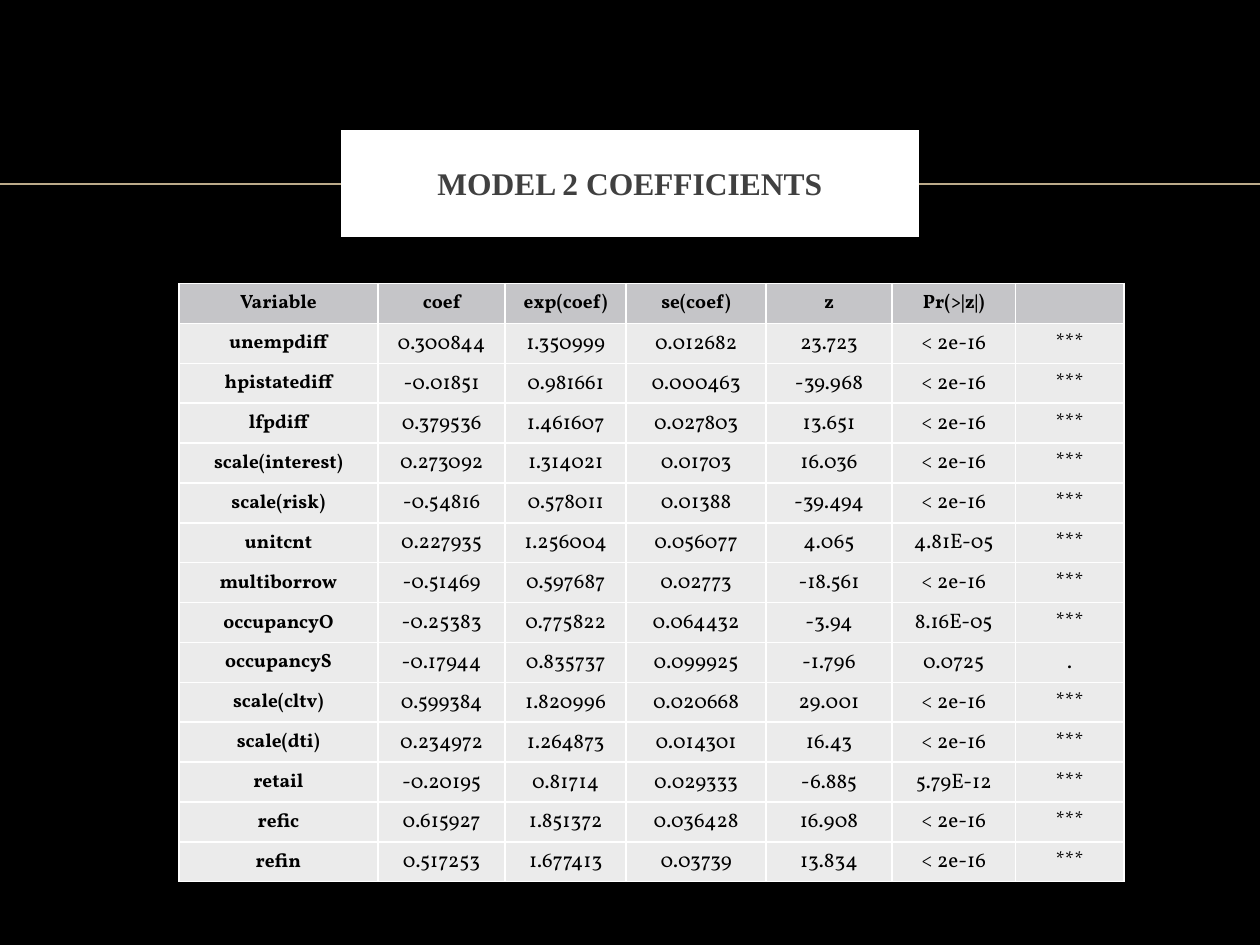
from lxml import etree
from pptx import Presentation
from pptx.dml.color import RGBColor
from pptx.enum import shapes, text
from pptx.oxml.ns import qn
from pptx.util import Inches, Pt

TITLE = "MODEL 2 COEFFICIENTS"
HEADER = ("Variable", "coef", "exp(coef)", "se(coef)", "z", "Pr(>|z|)", "")
COEFFICIENTS = [
    ("unempdiff", "0.300844", "1.350999", "0.012682", "23.723", "< 2e-16", "***"),
    ("hpistatediff", "-0.01851", "0.981661", "0.000463", "-39.968", "< 2e-16", "***"),
    ("lfpdiff", "0.379536", "1.461607", "0.027803", "13.651", "< 2e-16", "***"),
    ("scale(interest)", "0.273092", "1.314021", "0.01703", "16.036", "< 2e-16", "***"),
    ("scale(risk)", "-0.54816", "0.578011", "0.01388", "-39.494", "< 2e-16", "***"),
    ("unitcnt", "0.227935", "1.256004", "0.056077", "4.065", "4.81E-05", "***"),
    ("multiborrow", "-0.51469", "0.597687", "0.02773", "-18.561", "< 2e-16", "***"),
    ("occupancyO", "-0.25383", "0.775822", "0.064432", "-3.94", "8.16E-05", "***"),
    ("occupancyS", "-0.17944", "0.835737", "0.099925", "-1.796", "0.0725", "."),
    ("scale(cltv)", "0.599384", "1.820996", "0.020668", "29.001", "< 2e-16", "***"),
    ("scale(dti)", "0.234972", "1.264873", "0.014301", "16.43", "< 2e-16", "***"),
    ("retail", "-0.20195", "0.81714", "0.029333", "-6.885", "5.79E-12", "***"),
    ("refic", "0.615927", "1.851372", "0.036428", "16.908", "< 2e-16", "***"),
    ("refin", "0.517253", "1.677413", "0.03739", "13.834", "< 2e-16", "***"),
]
COLUMN_WIDTHS = (1.58, 1.01, 0.96, 1.11, 1, 0.98, 0.86)
TABLE_LEFT, TABLE_TOP, TABLE_HEIGHT = 1.42, 2.25, 4.75


def color(value):
    return RGBColor.from_string(value)


def paint(fill, value):
    fill.solid()
    fill.fore_color.rgb = color(value)


def write(paragraph, words, font_name, size, value, bold):
    paragraph.text = words
    paragraph.alignment = text.PP_ALIGN.CENTER
    font = paragraph.font
    font.name, font.size, font.bold = font_name, Pt(size), bold
    font.color.rgb = color(value)


def add_borders(cell, value, width):
    properties = cell._tc.get_or_add_tcPr()
    for position, side in enumerate(("lnL", "lnR", "lnT", "lnB")):
        line = etree.Element(qn(f"a:{side}"), w=str(Pt(width)))
        fill = etree.SubElement(line, qn("a:solidFill"))
        etree.SubElement(fill, qn("a:srgbClr"), val=value)
        properties.insert(position, line)


def add_title(slide):
    # Rule across the slide, behind the title box
    rule = slide.shapes.add_connector(
        shapes.MSO_CONNECTOR.STRAIGHT, 0, Inches(1.46), Inches(10), Inches(1.46))
    rule.line.color.rgb = color("BBAA8A")
    rule.line.width = Pt(1)
    etree.SubElement(rule._element.spPr, qn("a:effectLst"))

    # Title box with square corners
    box = slide.shapes.add_shape(
        shapes.MSO_SHAPE.RECTANGLE, Inches(2.75), Inches(1.07), Inches(4.5), Inches(0.77))
    box.shadow.inherit = False
    paint(box.fill, "FFFFFF")
    box.line.color.rgb = color("FFFFFF")
    box.line.width = Pt(6)
    etree.SubElement(box.line._get_or_add_ln(), qn("a:miter"), lim="800000")
    box.text_frame.vertical_anchor = text.MSO_ANCHOR.MIDDLE
    paragraph = box.text_frame.paragraphs[0]
    write(paragraph, TITLE, "Times New Roman", 18, "404040", True)
    paragraph.space_before = Pt(4)


def add_coefficient_table(slide):
    rows = [HEADER] + COEFFICIENTS
    table = slide.shapes.add_table(
        len(rows), len(HEADER), Inches(TABLE_LEFT), Inches(TABLE_TOP),
        Inches(sum(COLUMN_WIDTHS)), Inches(TABLE_HEIGHT)).table
    for column, width in zip(table.columns, COLUMN_WIDTHS):
        column.width = Inches(width)

    for row_index, values in enumerate(rows):
        for column_index, value in enumerate(values):
            is_header = row_index == 0
            is_label = is_header or column_index == 0
            cell = table.cell(row_index, column_index)
            cell.margin_left = cell.margin_right = cell.margin_top = Inches(0.01)
            cell.margin_bottom = 0
            cell.vertical_anchor = text.MSO_ANCHOR.MIDDLE
            paint(cell.fill, "C5C5C8" if is_header else "EBEBEB")
            add_borders(cell, "FFFFFF", 1)
            write(cell.text_frame.paragraphs[0], value, "Vollkorn",
                  11 if is_label else 12, "000000", is_label)


def main():
    presentation = Presentation()
    presentation.slide_width, presentation.slide_height = Inches(10), Inches(7.5)
    slide = presentation.slides.add_slide(presentation.slide_layouts[6])
    paint(slide.background.fill, "000000")
    add_title(slide)
    add_coefficient_table(slide)
    presentation.save("out.pptx")


if __name__ == "__main__":
    main()
